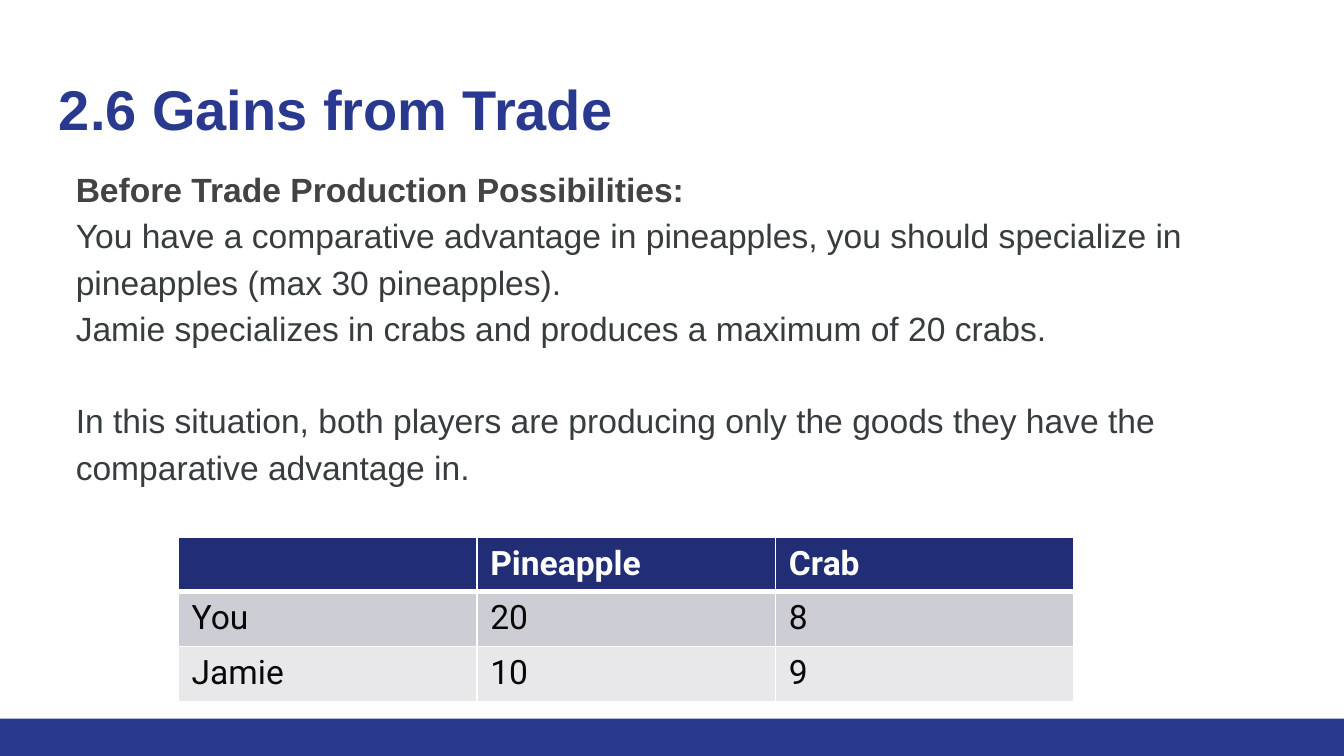
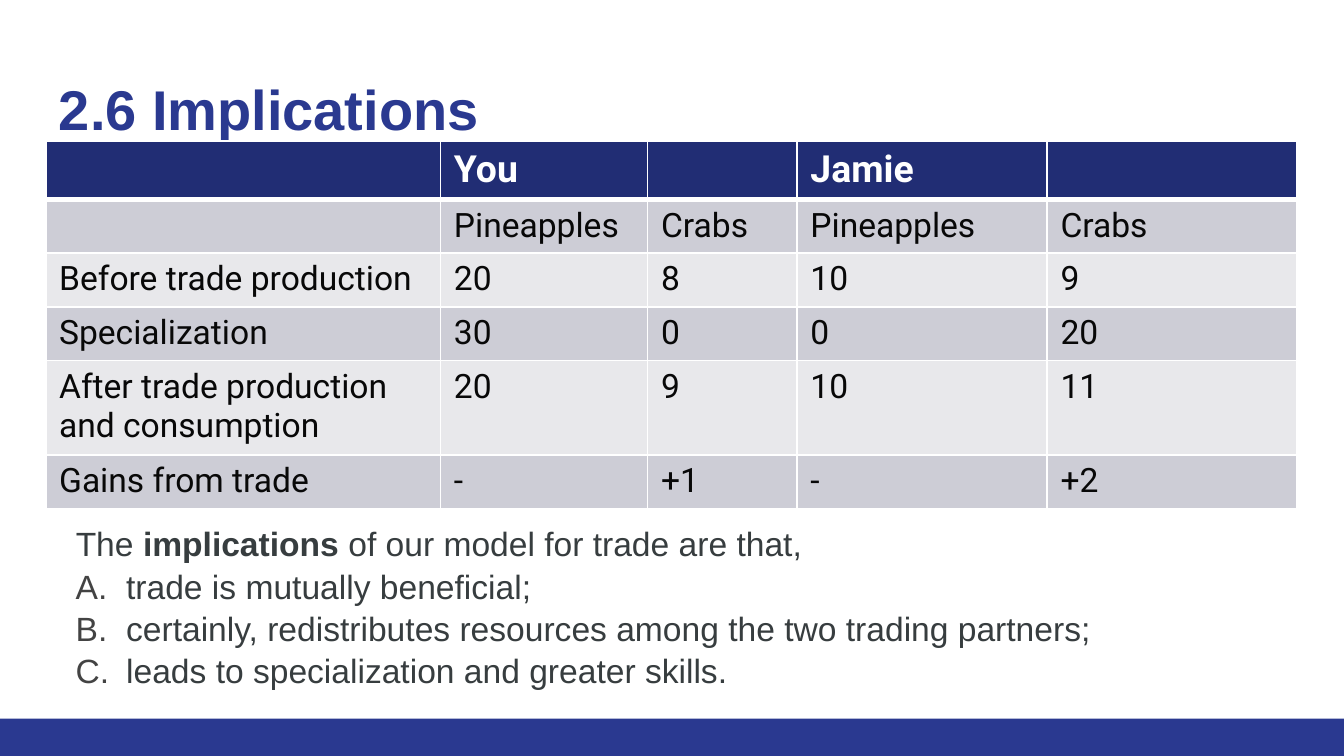
from lxml import etree
from pptx import Presentation
from pptx.dml.color import RGBColor
from pptx.enum.shapes import MSO_SHAPE
from pptx.enum.text import MSO_ANCHOR, PP_ALIGN
from pptx.oxml.ns import qn
from pptx.util import Pt

RECTANGLE = MSO_SHAPE.RECTANGLE
TOP = MSO_ANCHOR.TOP
LEFT, JUSTIFY = PP_ALIGN.LEFT, PP_ALIGN.JUSTIFY

COLORS = {
    "brand": "2A3990",
    "header": "212D74",
    "odd_row": "CDCDD6",
    "even_row": "E8E8EB",
    "cell_text": "080808",
    "heading": "434343",
    "body": "373D3F",
    "white": "FFFFFF",
}
WIDTH, HEIGHT = 720, 405
BAND_HEIGHT = 20
MARGIN = 24.5
CONTENT_WIDTH = WIDTH - 2 * MARGIN
INSET = 7.2

TITLE = {"size": 30, "name": "Arial", "bold": True, "color": "brand"}
BODY = {"size": 18, "name": "Arial", "bold": False, "color": "body"}
STRONG = BODY | {"bold": True}
HEADING = STRONG | {"color": "heading"}
CELL = {"size": 18, "name": "Roboto", "bold": False, "color": "cell_text"}
HEADER_CELL = CELL | {"bold": True, "color": "white"}

PLAIN = {"left": 9, "hanging": 0, "space_before": 0}
AFTER_GAP = PLAIN | {"space_before": 24.6}
LETTERED = {"left": 36, "hanging": 27, "space_before": 0}


def rgb(name):
    """Return the named colour."""
    return RGBColor.from_string(COLORS[name])


def style_font(font, style):
    """Apply a dict of format values to a font."""
    for key, value in style.items():
        if key == "color":
            font.color.rgb = rgb(value)
        else:
            setattr(font, key, Pt(value) if key == "size" else value)


def add_spans(para, spans):
    """Add (text, style) spans to a paragraph."""
    for text, style in spans:
        span = para.add_run()
        span.text = text
        style_font(span.font, style)


def indent_para(para, layout):
    """Set the indents of a paragraph and letter it when it hangs."""
    properties = para._p.get_or_add_pPr()
    properties.set("marL", str(Pt(layout["left"])))
    properties.set("indent", str(-Pt(layout["hanging"])))
    if layout["hanging"]:
        bullet_color = etree.SubElement(properties, qn("a:buClr"))
        etree.SubElement(bullet_color, qn("a:srgbClr"), val=COLORS["heading"])
        etree.SubElement(properties, qn("a:buAutoNum"), type="alphaUcPeriod")


def add_text(page, box, paras, line_spacing=1.0, alignment=LEFT):
    """Place paragraphs of (layout, spans) in a text box."""
    frame = page.shapes.add_textbox(*map(Pt, box)).text_frame
    frame_format = {"word_wrap": True, "vertical_anchor": TOP}
    for side in ("left", "top", "right", "bottom"):
        frame_format[f"margin_{side}"] = Pt(INSET)
    for key, value in frame_format.items():
        setattr(frame, key, value)
    for index, (layout, spans) in enumerate(paras):
        para = frame.add_paragraph() if index else frame.paragraphs[0]
        para.line_spacing = line_spacing
        para.alignment = alignment
        para.space_before = Pt(layout["space_before"])
        indent_para(para, layout)
        add_spans(para, spans)


def add_borders(cell, widths):
    """Draw white cell borders with a width in points for each side."""
    properties = cell._tc.get_or_add_tcPr()
    for side, width in widths.items():
        line = etree.SubElement(properties, qn(f"a:ln{side}"), w=str(Pt(width)))
        fill = etree.SubElement(line, qn("a:solidFill"))
        etree.SubElement(fill, qn("a:srgbClr"), val=COLORS["white"])


def fill_cell(cell, text, row, header_size):
    """Format one cell by its row and write its text."""
    widths = {
        "L": 1,
        "R": 1,
        "T": 3 if row == 1 else 1,
        "B": 3 if row == 0 else 1,
    }
    add_borders(cell, widths)
    fill_name = "header" if row == 0 else "odd_row" if row % 2 else "even_row"
    cell.fill.solid()
    cell.fill.fore_color.rgb = rgb(fill_name)
    style = HEADER_CELL | {"size": header_size} if row == 0 else CELL
    para = cell.text_frame.paragraphs[0]
    if text:
        add_spans(para, [(text, style)])
    else:
        style_font(para.font, style)


def add_trade_table(page, left, top, widths, heights, rows, header_size):
    """Add a table with a dark header and alternating rows."""
    box = (left, top, sum(widths), sum(heights))
    table = page.shapes.add_table(len(rows), len(widths), *map(Pt, box)).table
    for column, width in zip(table.columns, widths):
        column.width = Pt(width)
    for row, (height, texts) in enumerate(zip(heights, rows)):
        table.rows[row].height = Pt(height)
        for column, text in enumerate(texts):
            fill_cell(table.cell(row, column), text, row, header_size)


def add_page(deck, title):
    """Add a page with its footer band and title."""
    page = deck.slides.add_slide(deck.slide_layouts[6])
    box = (0, HEIGHT - BAND_HEIGHT, WIDTH, BAND_HEIGHT)
    band = page.shapes.add_shape(RECTANGLE, *map(Pt, box))
    band.shadow.inherit = False
    band.fill.solid()
    band.fill.fore_color.rgb = rgb("brand")
    band.line.fill.background()
    title_layout = PLAIN | {"left": 0}
    title_box = (MARGIN, 32.5, CONTENT_WIDTH, 47.5)
    add_text(page, title_box, [(title_layout, [(title, TITLE)])])
    return page


def build_gains(deck):
    """Build the page on production before trade."""
    page = add_page(deck, "2.6 Gains from Trade")
    lines = [
        "You have a comparative advantage in pineapples, you should specialize in",
        "pineapples (max 30 pineapples).",
        "Jamie specializes in crabs and produces a maximum of 20 crabs.",
    ]
    conclusion = (
        "In this situation, both players are producing only the goods "
        "they have the comparative advantage in."
    )
    paras = [(PLAIN, [("Before Trade Production Possibilities:", HEADING)])]
    paras += [(PLAIN, [(line, BODY)]) for line in lines]
    paras.append((AFTER_GAP, [(conclusion, BODY)]))
    add_text(page, (MARGIN, 80, CONTENT_WIDTH, 205), paras, 1.15)
    rows = [
        ("", "Pineapple", "Crab"),
        ("You", "20", "8"),
        ("Jamie", "10", "9"),
    ]
    add_trade_table(page, 95.5, 288, [160] * 3, [28, 29.5, 29.5], rows, 18)


def build_implications(deck):
    """Build the page comparing production before and after trade."""
    page = add_page(deck, "2.6 Implications")
    rows = [
        ("", "You", "", "Jamie", ""),
        ("", "Pineapples", "Crabs", "Pineapples", "Crabs"),
        ("Before trade production", "20", "8", "10", "9"),
        ("Specialization", "30", "0", "0", "20"),
        ("After trade production and consumption", "20", "9", "10", "11"),
        ("Gains from trade", "-", "+1", "-", "+2"),
    ]
    widths = [211.5, 111, 80, 134, 134]
    heights = [28, 26, 26, 26, 44.5, 26]
    add_trade_table(page, MARGIN, 75.5, widths, heights, rows, 20)
    implications = [
        "trade is mutually beneficial;",
        "certainly, redistributes resources among the two trading partners;",
        "leads to specialization and greater skills.",
    ]
    opening = [
        ("The ", BODY),
        ("implications", STRONG),
        (" of our model for trade are that,", BODY),
    ]
    paras = [(PLAIN, opening)]
    paras += [(LETTERED, [(text, BODY)]) for text in implications]
    add_text(page, (MARGIN, 272, CONTENT_WIDTH, 108), paras, 1.05, JUSTIFY)


def main():
    """Build and save the deck."""
    deck = Presentation()
    deck.slide_width, deck.slide_height = Pt(WIDTH), Pt(HEIGHT)
    build_gains(deck)
    build_implications(deck)
    deck.save("out.pptx")


if __name__ == "__main__":
    main()
